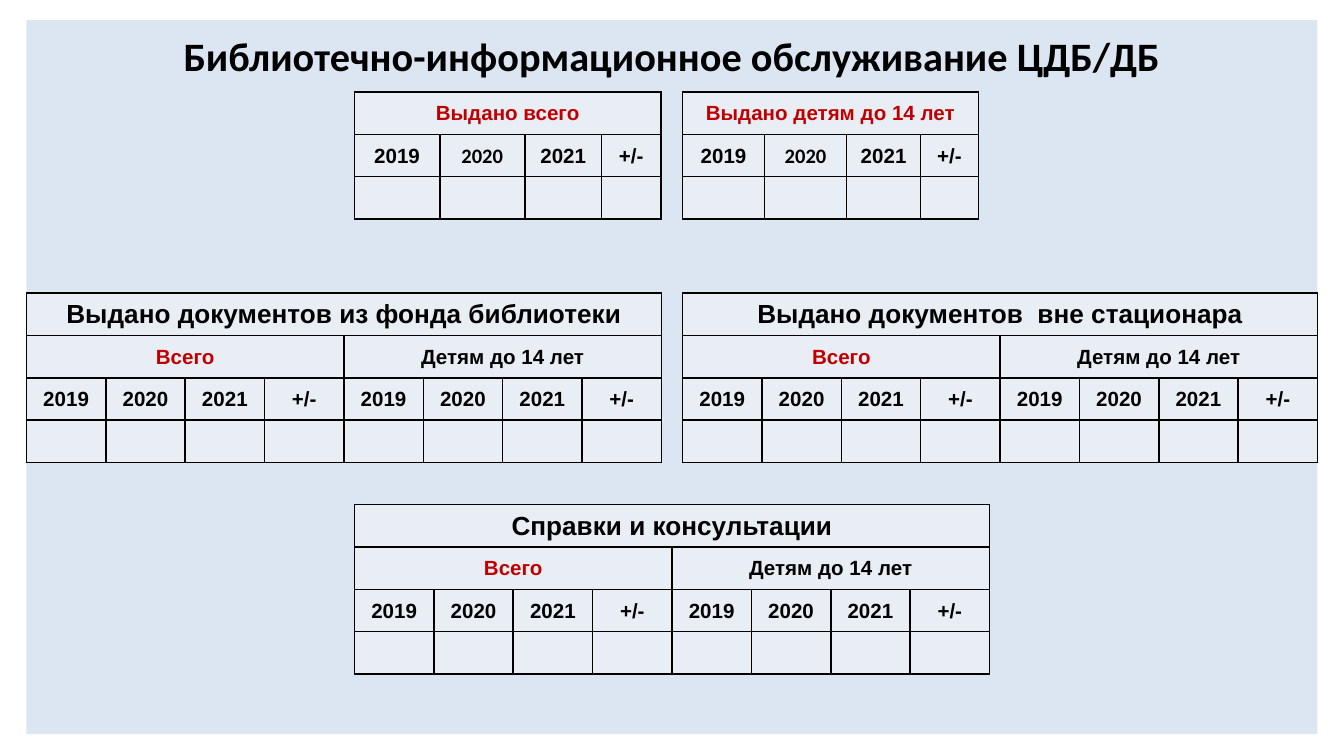
from lxml import etree
from pptx import Presentation
from pptx.dml.color import RGBColor
from pptx.enum.shapes import MSO_SHAPE
from pptx.enum.text import MSO_ANCHOR, MSO_AUTO_SIZE, PP_ALIGN
from pptx.oxml.ns import qn
from pptx.util import Cm, Pt

RECT = MSO_SHAPE.RECTANGLE
MIDDLE = MSO_ANCHOR.MIDDLE
CENTER = PP_ALIGN.CENTER
NO_FIT = MSO_AUTO_SIZE.NONE

COLORS = {"panel": "DCE6F2", "cell": "E9EDF4", "text": "000000",
          "accent": "C00000", "border": "000000"}
ROW_H = 0.8
COLUMNS = ["2019", "2020", "2021", "+/-"]


def rgb(name):
    return RGBColor.from_string(COLORS[name])


def put_text(tf, text, size=11, color="text", font="Arial", bold=True):
    p = tf.paragraphs[0]
    p.alignment = CENTER
    r = p.add_run()
    r.text = text
    r.font.size = Pt(size)
    r.font.name = font
    r.font.bold = bold
    r.font.color.rgb = rgb(color)


def format_cell(cell):
    cell.margin_left = cell.margin_right = cell.margin_top = Cm(0.02)
    cell.margin_bottom = 0
    cell.vertical_anchor = MIDDLE
    # Borders precede the fill in the cell properties
    tcPr = cell._tc.get_or_add_tcPr()
    for side in ("lnL", "lnR", "lnT", "lnB"):
        ln = etree.SubElement(tcPr, qn(f"a:{side}"), w=str(Pt(1)))
        fill = etree.SubElement(ln, qn("a:solidFill"))
        etree.SubElement(fill, qn("a:srgbClr"), val=COLORS["border"])
    cell.fill.solid()
    cell.fill.fore_color.rgb = rgb("cell")


def add_grid(s, left, top, widths, rows):
    table = s.shapes.add_table(rows, len(widths), Cm(left), Cm(top),
                               Cm(sum(widths)), Cm(ROW_H * rows)).table
    for column, width in zip(table.columns, widths):
        column.width = Cm(width)
    for row in table.rows:
        row.height = Cm(ROW_H)
    for cell in table.iter_cells():
        format_cell(cell)
    return table


def put_merged(table, row, first, last, text, **fmt):
    cell = table.cell(row, first)
    cell.merge(table.cell(row, last))
    put_text(cell.text_frame, text, **fmt)


def add_total_table(s, left, top, widths, title):
    table = add_grid(s, left, top, widths, 3)
    put_merged(table, 0, 0, 3, title, color="accent")
    for i, label in enumerate(COLUMNS):
        font = "Calibri" if label == "2020" else "Arial"
        put_text(table.cell(1, i).text_frame, label, font=font)


def add_split_table(s, left, top, width, title):
    table = add_grid(s, left, top, [width / 8] * 8, 4)
    put_merged(table, 0, 0, 7, title, size=14)
    put_merged(table, 1, 0, 3, "Всего", color="accent")
    put_merged(table, 1, 4, 7, "Детям до 14 лет")
    for i, label in enumerate(COLUMNS * 2):
        put_text(table.cell(2, i).text_frame, label)


def add_panel(s, left, top, width, height):
    sp = s.shapes.add_shape(RECT, Cm(left), Cm(top), Cm(width), Cm(height))
    sp.shadow.inherit = False
    sp.fill.solid()
    sp.fill.fore_color.rgb = rgb("panel")
    sp.line.fill.background()
    # Send behind the title
    s.shapes._spTree.insert(2, sp._element)


def add_title(s, left, top, width, height):
    sp = s.shapes.title
    sp.left, sp.top, sp.width, sp.height = (
        Cm(left), Cm(top), Cm(width), Cm(height))
    tf = sp.text_frame
    tf.auto_size = NO_FIT
    tf.word_wrap = True
    tf.vertical_anchor = MIDDLE
    tf.margin_top = tf.margin_bottom = 0
    put_text(tf, "Библиотечно-информационное обслуживание ЦДБ/ДБ",
             size=21.6, font="Calibri")


def main():
    prs = Presentation()
    prs.slide_width, prs.slide_height = Cm(25.4), Cm(14.29)
    s = prs.slides.add_slide(prs.slide_layouts[5])

    # Background and title
    add_panel(s, 0.5, 0.38, 24.4, 13.5)
    add_title(s, 0.9, 0.53, 23.6, 1.05)

    # Totals
    add_total_table(s, 6.7, 1.74, [1.61, 1.61, 1.45, 1.12], "Выдано всего")
    add_total_table(s, 12.9, 1.74, [1.55, 1.55, 1.4, 1.09],
                    "Выдано детям до 14 лет")

    # Breakdown by readers
    for left, top, title in [
        (0.5, 5.54, "Выдано документов из фонда библиотеки"),
        (12.9, 5.54, "Выдано документов  вне стационара"),
        (6.7, 9.54, "Справки и консультации"),
    ]:
        add_split_table(s, left, top, 12, title)

    prs.save("out.pptx")


if __name__ == "__main__":
    main()
